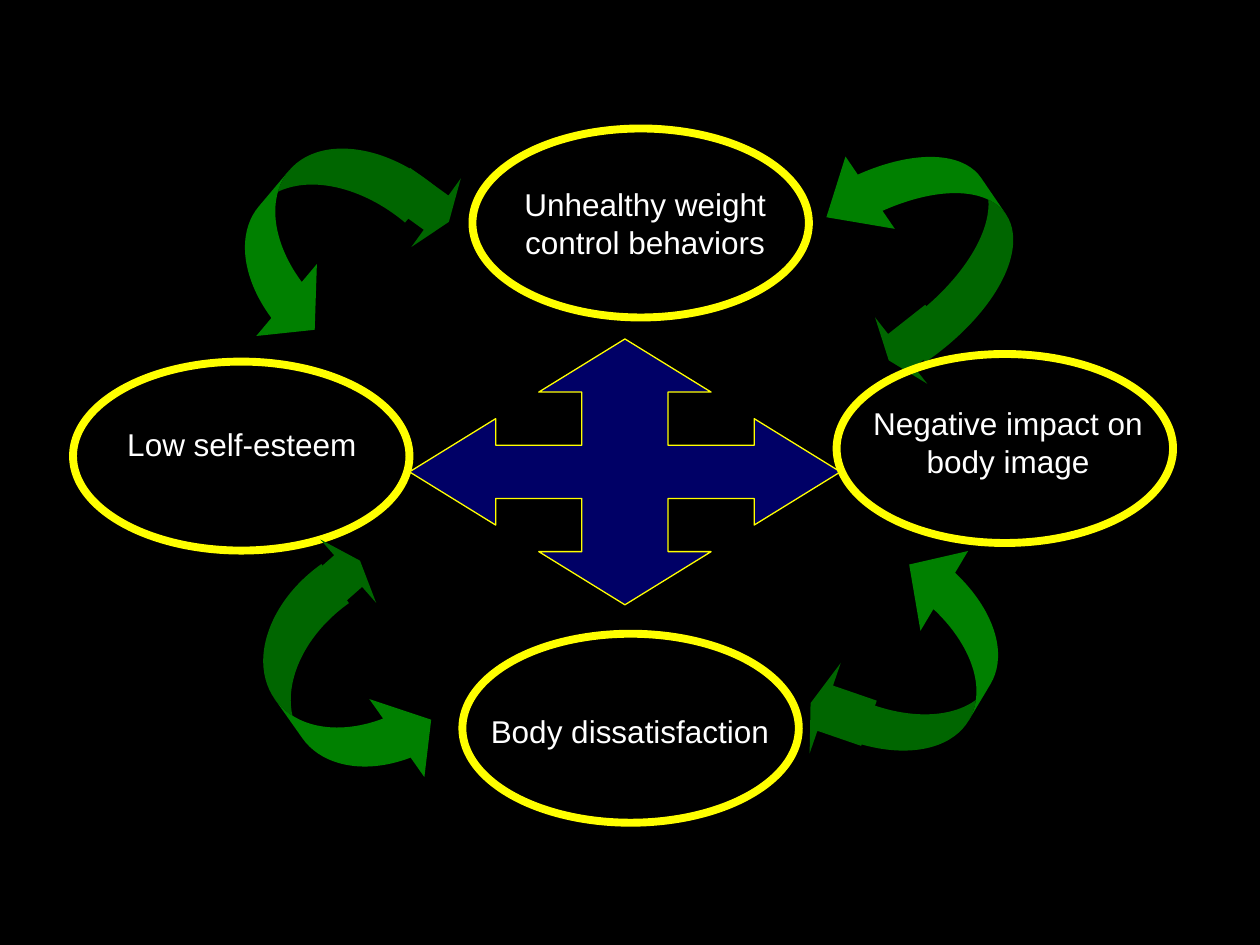
import pptx
import pptx.dml.color
import pptx.enum.shapes
import pptx.enum.text
import pptx.util

Inches = pptx.util.Inches
Pt = pptx.util.Pt
RGBColor = pptx.dml.color.RGBColor
Shape = pptx.enum.shapes.MSO_SHAPE

BLACK = RGBColor(0x00, 0x00, 0x00)
WHITE = RGBColor(0xFF, 0xFF, 0xFF)
YELLOW = RGBColor(0xFF, 0xFF, 0x00)
NAVY = RGBColor(0x00, 0x00, 0x66)
GREEN = RGBColor(0x00, 0x80, 0x00)
DARK_GREEN = RGBColor(0x00, 0x66, 0x00)

FRAME_FORMAT = {
    "word_wrap": True,
    "auto_size": pptx.enum.text.MSO_AUTO_SIZE.SHAPE_TO_FIT_TEXT,
    "vertical_anchor": pptx.enum.text.MSO_ANCHOR.TOP,
}
FONT_FORMAT = {"name": "Arial", "size": Pt(18)}

OVAL_SIZE = (2.67, 1.5)
BODY = ("Body dissatisfaction", (3.67, 5.03), (0.08, 0.57, 2.5, 0.91))
BEHAVIORS = ("Unhealthy weight control behaviors", (3.75, 1.02), (0.08, 0.4, 2.58, 0.91))
ESTEEM = ("Low self-esteem", (0.58, 2.87), (0.09, 0.45, 2.5, 0.51))
IMAGE = ("Negative impact on body image", (6.64, 2.81), (0.11, 0.35, 2.5, 0.91))

CURVES = [
    ((2, 0.95, 0.97, 1.86), 40.1, (0.385, 0.77, 0.333)),
    ((6.86, 4.3, 1.04, 1.84), 210.8, (0.322, 0.709, 0.333)),
    ((2.26, 4.57, 0.92, 1.89), 324.8, (0.412, 0.824, 0.333)),
    ((6.75, 0.95, 1.19, 1.74), 145.7, (0.292, 0.584, 0.333)),
]
TIPS = [
    ((3.11, 1.28, 0.5, 0.67), 35.8),
    ((7, 2.37, 0.5, 0.67), 141.8),
    ((6.42, 5.28, 0.49, 0.76), 199),
    ((2.42, 4.28, 0.5, 0.67), 318.6),
]
TIP_ADJUSTMENTS = (0.5, 0.25)


def apply_format(target, values):
    for attribute, value in values.items():
        setattr(target, attribute, value)


def add_node(slide, wording, corner, label_box):
    left, top = corner
    oval = slide.shapes.add_shape(
        Shape.OVAL, *map(Inches, (left, top, *OVAL_SIZE)))
    oval.shadow.inherit = False
    oval.fill.background()
    oval.line.color.rgb = YELLOW
    oval.line.width = Pt(4.5)

    dx, dy, width, height = label_box
    label = slide.shapes.add_textbox(
        *map(Inches, (left + dx, top + dy, width, height)))
    apply_format(label.text_frame, FRAME_FORMAT)
    paragraph = label.text_frame.paragraphs[0]
    paragraph.alignment = pptx.enum.text.PP_ALIGN.CENTER
    run = paragraph.add_run()
    run.text = wording
    apply_format(run.font, FONT_FORMAT)
    run.font.color.rgb = WHITE


def add_cross(slide, left, top, width, height):
    arm = [(0.5, 0), (0.3, 0.2), (0.4, 0.2), (0.4, 0.4), (0.2, 0.4), (0.2, 0.3)]
    outline = []
    for _ in range(4):
        outline += arm
        arm = [(y, 1 - x) for x, y in arm]
    corners = [(Inches(left + x * width), Inches(top + y * height))
               for x, y in outline]
    builder = slide.shapes.build_freeform(*corners[0])
    builder.add_line_segments(corners[1:], close=True)
    cross = builder.convert_to_shape()
    cross.shadow.inherit = False
    cross.fill.solid()
    cross.fill.fore_color.rgb = NAVY
    cross.line.color.rgb = YELLOW
    cross.line.width = Pt(0.75)


def add_arrow(slide, preset, box, rotation, adjustments, color):
    arrow = slide.shapes.add_shape(preset, *map(Inches, box))
    arrow.rotation = rotation
    for index, value in enumerate(adjustments):
        arrow.adjustments[index] = value
    arrow.shadow.inherit = False
    arrow.fill.solid()
    arrow.fill.fore_color.rgb = color
    arrow.line.fill.background()


def add_cycle(slide):
    for box, rotation, adjustments in CURVES:
        add_arrow(slide, Shape.CURVED_RIGHT_ARROW, box, rotation, adjustments, GREEN)
    for box, rotation in TIPS:
        add_arrow(slide, Shape.RIGHT_ARROW, box, rotation, TIP_ADJUSTMENTS, DARK_GREEN)


def main():
    deck = pptx.Presentation()
    deck.slide_width = Inches(10)
    deck.slide_height = Inches(7.5)
    slide = deck.slides.add_slide(deck.slide_layouts[6])
    slide.background.fill.solid()
    slide.background.fill.fore_color.rgb = BLACK

    for node in (BODY, BEHAVIORS, ESTEEM):
        add_node(slide, *node)
    add_cross(slide, 3.25, 2.69, 3.42, 2.11)
    add_cycle(slide)
    add_node(slide, *IMAGE)
    deck.save("out.pptx")


if __name__ == "__main__":
    main()
